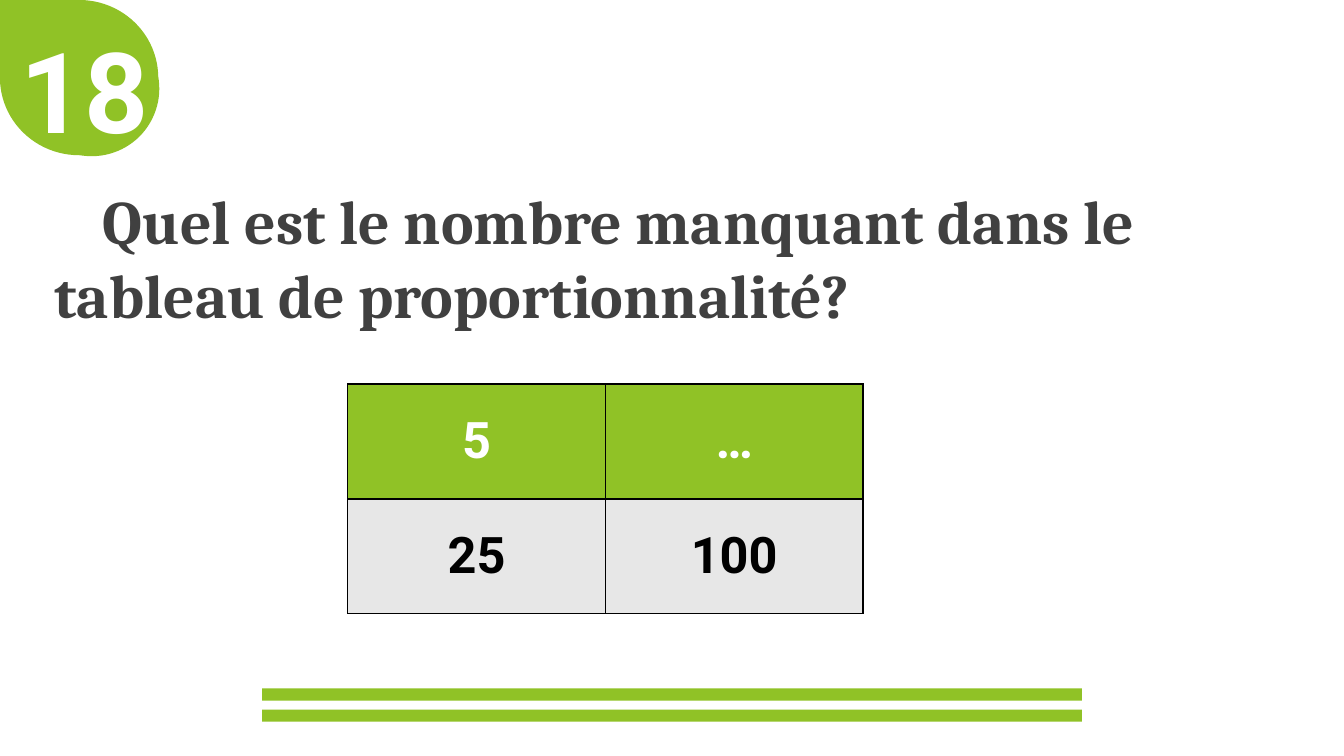
from dataclasses import dataclass

from lxml import etree
from pptx import Presentation
from pptx.dml.color import RGBColor
from pptx.enum.shapes import MSO_SHAPE
from pptx.enum.text import MSO_ANCHOR, MSO_AUTO_SIZE, PP_ALIGN
from pptx.oxml.ns import qn
from pptx.util import Emu, Pt

EMU_PER_PX = 9144  # 100 px to the inch
TITLE_ONLY = 5
TEARDROP, ELLIPSE, RECTANGLE = MSO_SHAPE.TEAR, MSO_SHAPE.OVAL, MSO_SHAPE.RECTANGLE
TOP, MIDDLE = MSO_ANCHOR.TOP, MSO_ANCHOR.MIDDLE
LEFT, CENTER = PP_ALIGN.LEFT, PP_ALIGN.CENTER
FIT_SHAPE, NO_FIT = MSO_AUTO_SIZE.SHAPE_TO_FIT_TEXT, MSO_AUTO_SIZE.NONE
BORDER_SIDES = ("a:lnL", "a:lnR", "a:lnT", "a:lnB")


@dataclass(frozen=True)
class Theme:
    green: str = "90C226"
    grey: str = "E7E7E7"
    white: str = "FFFFFF"
    black: str = "000000"
    ink: str = "404040"
    number_font: str = "Roboto"
    question_font: str = "Cambria"
    number_size: int = 80
    question_size: int = 44
    question_leading: int = 53
    cell_size: int = 36
    border_width: int = 1


@dataclass(frozen=True)
class Box:
    left: int
    top: int
    width: int
    height: int

    def emu(self) -> tuple:
        return tuple(px(n) for n in (self.left, self.top, self.width, self.height))


@dataclass(frozen=True)
class Block:
    kind: object
    box: Box
    mirrored: bool = False


@dataclass(frozen=True)
class Row:
    values: tuple
    fill: str
    color: str


THEME = Theme()
BAR_PITCH = 21
BLOCKS = [
    Block(TEARDROP, Box(0, 0, 157, 154), mirrored=True),
    Block(ELLIPSE, Box(24, 21, 134, 134)),
    *(Block(RECTANGLE, Box(260, 683 + i * BAR_PITCH, 813, 12)) for i in range(2)),
]
ROWS = [
    Row(("5", "…"), THEME.green, THEME.white),
    Row(("25", "100"), THEME.grey, THEME.black),
]
QUESTION = "Quel est le nombre manquant dans le tableau de proportionnalité?"
QUESTION_BOX = Box(44, 176, 1124, 496)
QUESTION_INDENT = 48
NUMBER_BOX = Box(10, 16, 152, 145)
TABLE_BOX = Box(345, 381, 511, 228)


def px(length: int) -> Emu:
    return Emu(length * EMU_PER_PX)


def style(para, font: str, size: int, color: str, align=LEFT) -> None:
    para.alignment = align
    para.font.name = font
    para.font.size = Pt(size)
    para.font.bold = True
    para.font.color.rgb = RGBColor.from_string(color)


def draw_block(page, block: Block) -> None:
    shape = page.shapes.add_shape(block.kind, *block.box.emu())
    shape.shadow.inherit = False
    shape.fill.solid()
    shape.fill.fore_color.rgb = RGBColor.from_string(THEME.green)
    shape.line.fill.background()
    if block.mirrored:
        shape.element.spPr.find(qn("a:xfrm")).set("flipH", "1")


def draw_number(page, text: str) -> None:
    frame = page.shapes.add_textbox(*NUMBER_BOX.emu()).text_frame
    frame.word_wrap = False
    frame.auto_size = FIT_SHAPE
    frame.text = text
    style(frame.paragraphs[0], THEME.number_font, THEME.number_size, THEME.white)


def draw_question(page) -> None:
    title = page.shapes.title
    title.left, title.top, title.width, title.height = QUESTION_BOX.emu()
    frame = title.text_frame
    frame.word_wrap = True
    frame.auto_size = NO_FIT
    frame.vertical_anchor = TOP
    frame.text = QUESTION
    para = frame.paragraphs[0]
    para.line_spacing = Pt(THEME.question_leading)
    style(para, THEME.question_font, THEME.question_size, THEME.ink)
    properties = para._p.get_or_add_pPr()
    properties.set("marL", "0")
    properties.set("indent", str(px(QUESTION_INDENT)))


def add_borders(cell) -> None:
    properties = cell._tc.get_or_add_tcPr()
    for position, side in enumerate(BORDER_SIDES):
        line = etree.Element(qn(side), w=str(Pt(THEME.border_width)))
        fill = etree.SubElement(line, qn("a:solidFill"))
        etree.SubElement(fill, qn("a:srgbClr"), val=THEME.black)
        properties.insert(position, line)


def draw_table(page) -> None:
    frame = page.shapes.add_table(len(ROWS), len(ROWS[0].values), *TABLE_BOX.emu())
    table = frame.table
    table.first_row = False
    table.horz_banding = False
    for r, row in enumerate(ROWS):
        for c, value in enumerate(row.values):
            cell = table.cell(r, c)
            cell.text = value
            cell.vertical_anchor = MIDDLE
            cell.fill.solid()
            cell.fill.fore_color.rgb = RGBColor.from_string(row.fill)
            style(cell.text_frame.paragraphs[0], THEME.number_font,
                  THEME.cell_size, row.color, CENTER)
            add_borders(cell)


def main() -> None:
    deck = Presentation()
    deck.slide_width, deck.slide_height = px(1333), px(750)
    page = deck.slides.add_slide(deck.slide_layouts[TITLE_ONLY])

    # Question and its table
    draw_question(page)
    draw_table(page)

    # Number badge and bottom bars
    for block in BLOCKS:
        draw_block(page, block)
    draw_number(page, "18")

    deck.save("out.pptx")


if __name__ == "__main__":
    main()
